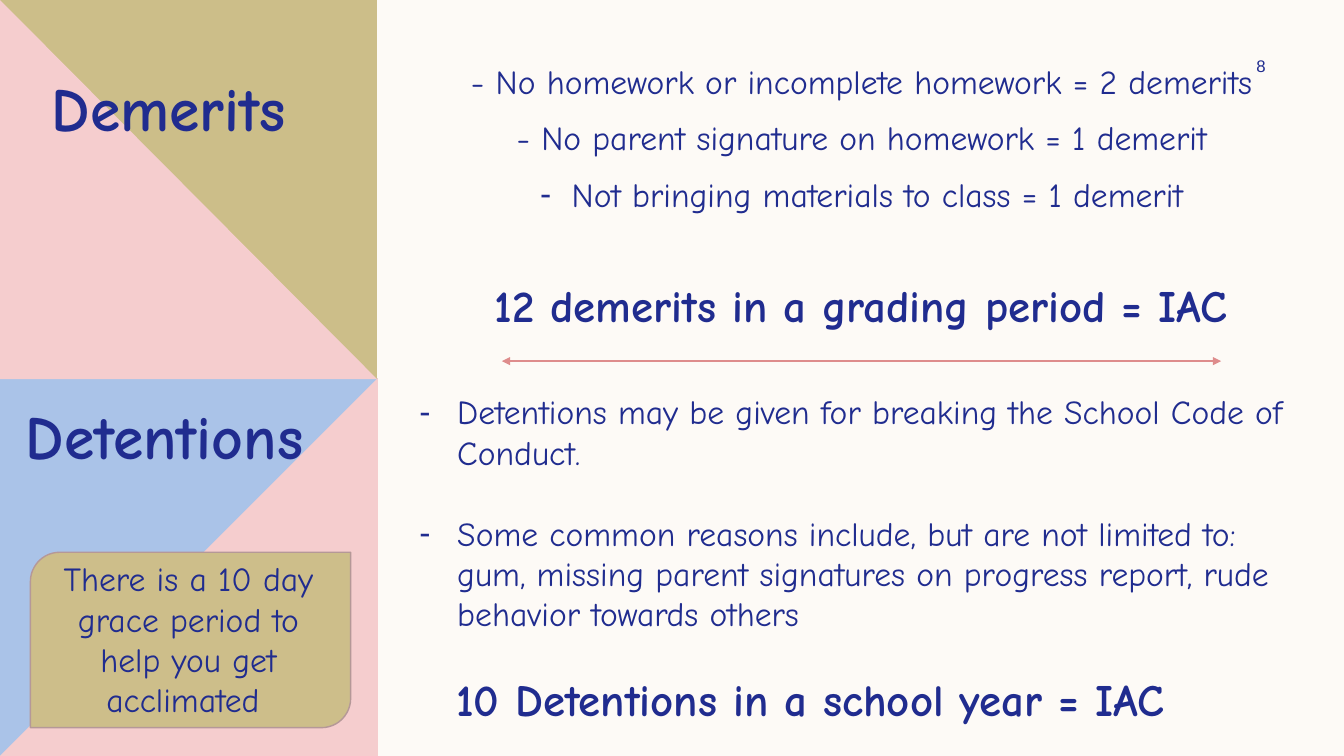
from dataclasses import dataclass

from lxml.etree import SubElement
from pptx import Presentation
from pptx.dml.color import RGBColor
from pptx.enum.shapes import MSO_CONNECTOR, MSO_SHAPE
from pptx.enum.text import MSO_ANCHOR, PP_ALIGN
from pptx.oxml.ns import qn
from pptx.util import Emu, Pt

EMU_PER_PX = 9525
NAVY, PINK, BLUE, TAN = "202C8F", "F5CDCE", "AAC3E8", "CCBE89"
LEFT, CENTER = PP_ALIGN.LEFT, PP_ALIGN.CENTER


@dataclass(frozen=True)
class Panel:
    corners: tuple[tuple[int, int], ...]
    fill: str


@dataclass(frozen=True)
class Para:
    text: str
    size: int = 24
    bold: bool = False
    align: PP_ALIGN = LEFT
    dash_indent: int = 0
    before: int = 0
    after: int = 0
    line_spacing: float = 1.0
    font: str = "Comic Neue"


@dataclass(frozen=True)
class TextBlock:
    left: int
    top: int
    width: int
    height: int
    paras: tuple[Para, ...]
    anchor: MSO_ANCHOR = MSO_ANCHOR.TOP


def px(length: int) -> Emu:
    return Emu(length * EMU_PER_PX)


def rgb(value: str) -> RGBColor:
    return RGBColor.from_string(value)


def rule(text: str, **options) -> Para:
    """A centred line of the demerit list."""
    return Para(text, align=CENTER, after=6, line_spacing=1.19, **options)


PANELS = (
    Panel(((0, 360), (360, 360), (360, 720), (0, 720)), BLUE),
    Panel(((360, 360), (360, 720), (0, 720)), PINK),
    Panel(((0, 0), (359, 0), (359, 361), (0, 361)), TAN),
    Panel(((0, 0), (359, 361), (0, 361)), PINK),
)

TEXT_BLOCKS = (
    TextBlock(357, 46, 927, 208, (
        rule("- No homework or incomplete homework = 2 demerits"),
        rule("- No parent signature on homework = 1 demerit"),
        rule("Not bringing materials to class = 1 demerit", dash_indent=30),
        rule("12 demerits in a grading period = IAC", size=32, bold=True, before=32),
    )),
    TextBlock(1149, 48, 104, 29, (Para("8", 12, align=CENTER, font="Arial"),),
              MSO_ANCHOR.MIDDLE),
    TextBlock(15, 374, 646, 81, (Para("Detentions", 44, True),)),
    TextBlock(390, 368, 862, 281, (
        Para("Detentions may be given for breaking the School Code of Conduct.",
             dash_indent=36),
        Para("Some common reasons include, but are not limited to: gum, missing "
             "parent signatures on progress report, rude behavior towards others",
             dash_indent=36, before=29),
    )),
    TextBlock(425, 635, 826, 61, (Para("10 Detentions in a school year = IAC", 32, True),)),
    TextBlock(40, 62, 310, 81, (Para("Demerits", 44, True),)),
    TextBlock(33, 527, 293, 165, (
        Para("There is a 10 day grace period to help you get acclimated ", align=CENTER),
    )),
)


def draw_panel(slide, panel: Panel) -> None:
    builder = slide.shapes.build_freeform(*panel.corners[0], scale=EMU_PER_PX)
    builder.add_line_segments(panel.corners[1:], close=True)
    shape = builder.convert_to_shape()
    shape.shadow.inherit = False
    shape.fill.solid()
    shape.fill.fore_color.rgb = rgb(panel.fill)
    shape.line.fill.background()


def draw_grace_card(slide) -> None:
    card = slide.shapes.add_shape(
        MSO_SHAPE.ROUND_2_DIAG_RECTANGLE, px(29), px(526), px(305), px(167))
    card.shadow.inherit = False
    card.fill.solid()
    card.fill.fore_color.rgb = rgb("CDBE8A")
    card.line.color.rgb = rgb("B59898")
    card.line.width = Pt(1)


def draw_divider(slide) -> None:
    divider = slide.shapes.add_connector(
        MSO_CONNECTOR.STRAIGHT, px(478), px(344), px(1163), px(344))
    divider.line.color.rgb = rgb("DE8C8C")
    divider.line.width = Pt(1.5)
    properties = divider.element.spPr
    outline = properties.find(qn("a:ln"))
    for end in ("a:headEnd", "a:tailEnd"):
        SubElement(outline, qn(end), type="triangle")
    SubElement(properties, qn("a:effectLst"))


def add_dash(paragraph, indent: int) -> None:
    """Give the paragraph a dash bullet with a hanging indent."""
    properties = paragraph._p.get_or_add_pPr()
    properties.set("marL", str(px(indent)))
    properties.set("indent", str(-px(indent)))
    SubElement(properties, qn("a:buFont"), typeface="Arial")
    SubElement(properties, qn("a:buChar"), char="-")


def draw_text(slide, block: TextBlock) -> None:
    frame = slide.shapes.add_textbox(
        px(block.left), px(block.top), px(block.width), px(block.height)).text_frame
    frame.word_wrap = True
    frame.vertical_anchor = block.anchor
    for index, para in enumerate(block.paras):
        paragraph = frame.add_paragraph() if index else frame.paragraphs[0]
        paragraph.alignment = para.align
        paragraph.line_spacing = para.line_spacing
        paragraph.space_before = Pt(para.before)
        paragraph.space_after = Pt(para.after)
        if para.dash_indent:
            add_dash(paragraph, para.dash_indent)
        run = paragraph.add_run()
        run.text = para.text
        run.font.name = para.font
        run.font.size = Pt(para.size)
        run.font.bold = para.bold
        run.font.color.rgb = rgb(NAVY)


def main() -> None:
    deck = Presentation()
    deck.slide_width, deck.slide_height = px(1280), px(720)
    slide = deck.slides.add_slide(deck.slide_layouts[6])
    slide.background.fill.solid()
    slide.background.fill.fore_color.rgb = rgb("FDFAF6")
    for panel in PANELS:
        draw_panel(slide, panel)
    draw_grace_card(slide)
    draw_divider(slide)
    for block in TEXT_BLOCKS:
        draw_text(slide, block)
    deck.save("out.pptx")


if __name__ == "__main__":
    main()
